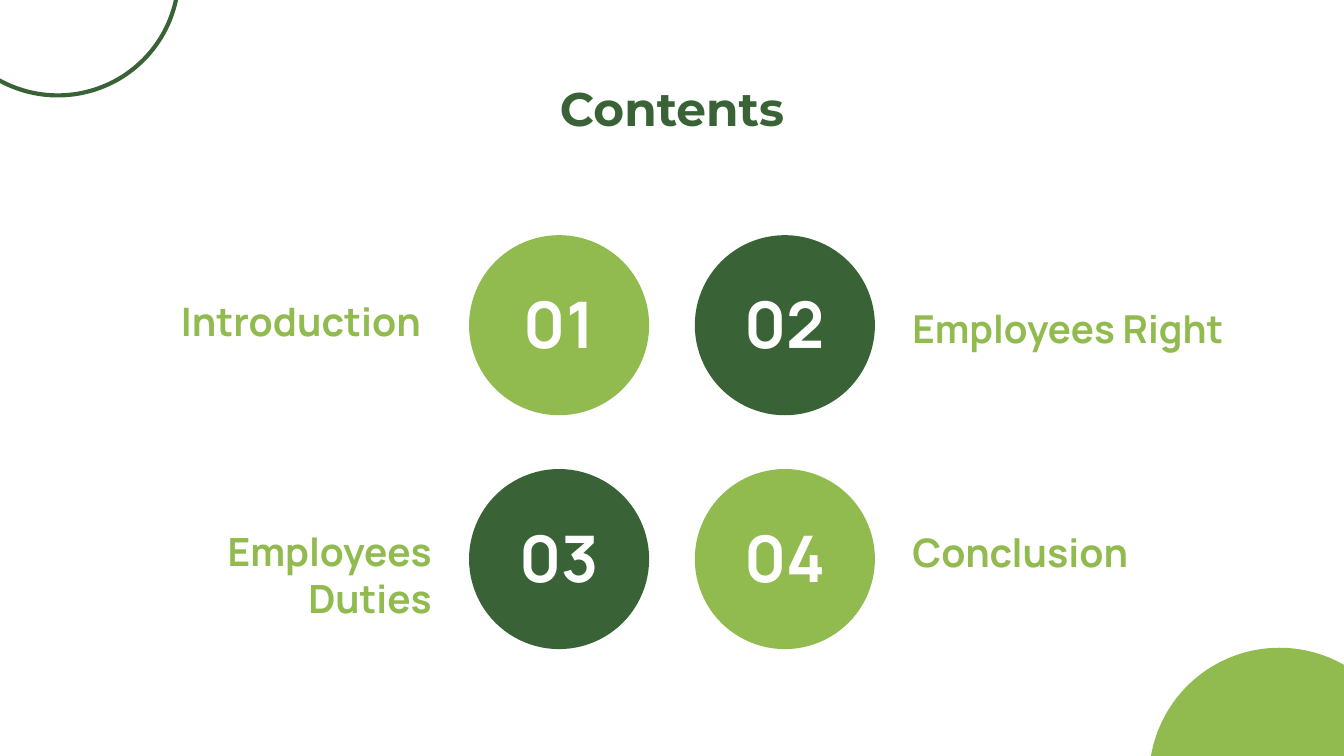
from dataclasses import dataclass
from typing import Optional

import pptx
import pptx.dml.color
import pptx.enum.shapes
import pptx.enum.text
import pptx.util

Inches = pptx.util.Inches
RGBColor = pptx.dml.color.RGBColor
Align = pptx.enum.text.PP_ALIGN
Anchor = pptx.enum.text.MSO_ANCHOR

DARK_GREEN = RGBColor(0x39, 0x63, 0x36)
LIGHT_GREEN = RGBColor(0x91, 0xBA, 0x4F)
WHITE = RGBColor(0xFF, 0xFF, 0xFF)

# Widescreen slide
SLIDE_WIDTH = 10
SLIDE_HEIGHT = SLIDE_WIDTH * 9 / 16

# Grid of numbered circles
COLUMNS = (3.49, 5.17)
ROWS = (1.75, 3.49)
DIAMETER = 1.34


@dataclass
class Topic:
    number: str
    title: str
    column: int
    row: int
    color: RGBColor
    left: float
    top: float
    width: float
    size: float


TOPICS = [
    Topic("01", "Introduction", 0, 0, LIGHT_GREEN, 0.69, 2.11, 2.54, 21),
    Topic("02", "Employees Right", 1, 0, DARK_GREEN, 6.69, 2.17, 2.54, 20.6),
    Topic("03", "Employees Duties", 0, 1, DARK_GREEN, 0.66, 3.83, 2.65, 20.8),
    Topic("04", "Conclusion", 1, 1, LIGHT_GREEN, 6.69, 3.83, 2.54, 21),
]


def add_circle(slide, left: float, top: float, diameter: float,
               fill: Optional[RGBColor] = None,
               outline: Optional[RGBColor] = None) -> None:
    circle = slide.shapes.add_shape(
        pptx.enum.shapes.MSO_SHAPE.OVAL,
        Inches(left), Inches(top), Inches(diameter), Inches(diameter))
    circle.shadow.inherit = False
    if fill is None:
        circle.fill.background()
    else:
        circle.fill.solid()
        circle.fill.fore_color.rgb = fill
    if outline is None:
        circle.line.fill.background()
    else:
        circle.line.color.rgb = outline
        circle.line.width = pptx.util.Pt(2.25)


def add_text(slide, text: str, left: float, top: float, width: float,
             height: float, *, size: float, color: RGBColor,
             font: str = "Manrope", align=Align.CENTER,
             anchor=Anchor.TOP) -> None:
    box = slide.shapes.add_textbox(
        Inches(left), Inches(top), Inches(width), Inches(height))
    frame = box.text_frame
    frame.word_wrap = True
    frame.vertical_anchor = anchor
    frame.margin_left = frame.margin_right = Inches(0.1)
    frame.margin_top = frame.margin_bottom = Inches(0.1)
    paragraph = frame.paragraphs[0]
    paragraph.alignment = align
    run = paragraph.add_run()
    run.text = text
    run.font.name = font
    run.font.size = pptx.util.Pt(size)
    run.font.bold = True
    run.font.color.rgb = color


def add_topic(slide, topic: Topic) -> None:
    left, top = COLUMNS[topic.column], ROWS[topic.row]
    add_circle(slide, left, top, DIAMETER, fill=topic.color)
    add_text(slide, topic.number, left + 0.03, top + 0.26, 1.28, 0.78,
             size=34.4, color=WHITE, anchor=Anchor.MIDDLE)
    add_text(slide, topic.title, topic.left, topic.top, topic.width, 0.63,
             size=topic.size, color=LIGHT_GREEN,
             align=Align.RIGHT if topic.column == 0 else Align.LEFT)


def main() -> None:
    deck = pptx.Presentation()
    deck.slide_width = Inches(SLIDE_WIDTH)
    deck.slide_height = Inches(SLIDE_HEIGHT)
    slide = deck.slides.add_slide(deck.slide_layouts[6])
    slide.background.fill.solid()
    slide.background.fill.fore_color.rgb = WHITE

    # Corner decoration
    add_circle(slide, -0.47, -1.09, 1.8, outline=DARK_GREEN)
    add_circle(slide, 8.55, 4.82, 1.94, fill=LIGHT_GREEN)

    # Heading
    add_text(slide, "Contents", 0.34, 0.49, 9.32, 0.63,
             size=25.2, color=DARK_GREEN, font="Montserrat")

    # Numbered topics
    for topic in TOPICS:
        add_topic(slide, topic)

    deck.save("out.pptx")


if __name__ == "__main__":
    main()
